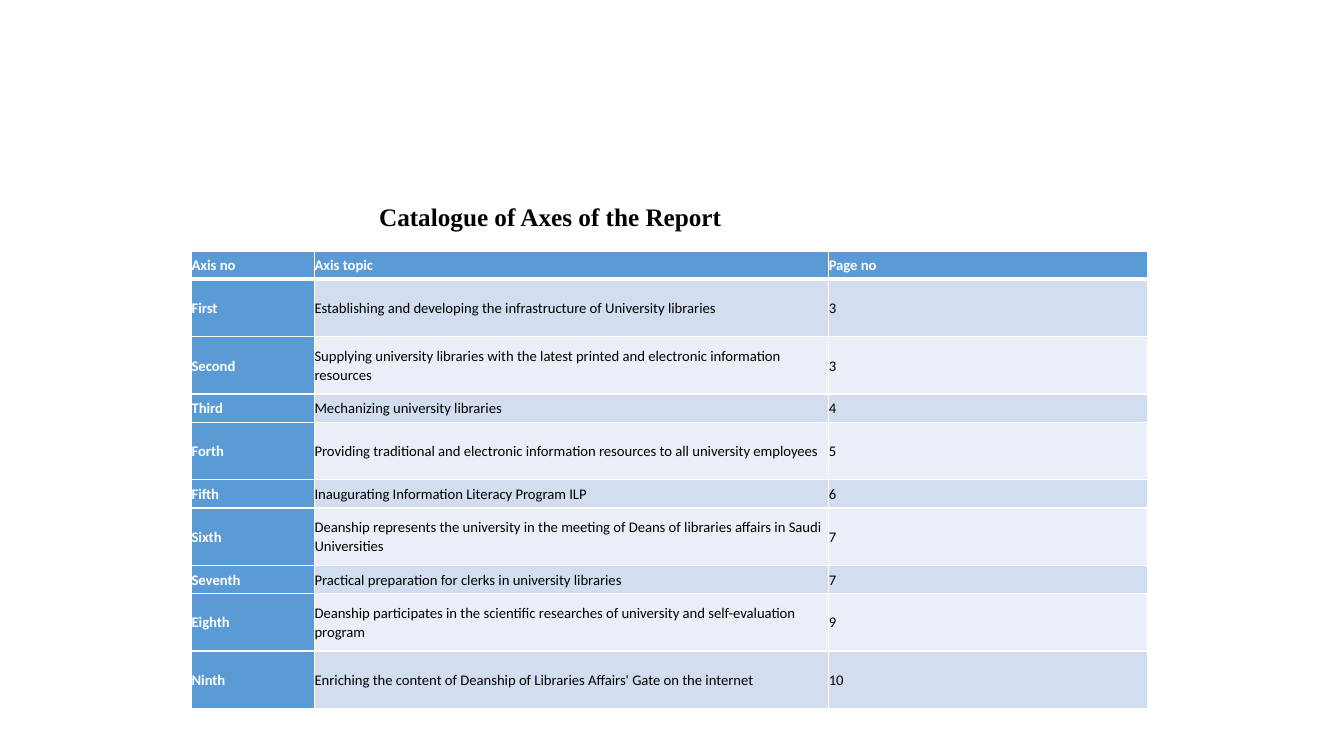
"""Build the slide that lists the axes of the report and their pages."""
from lxml import etree
from pptx import Presentation
from pptx.dml.color import RGBColor
from pptx.enum.text import MSO_ANCHOR, MSO_AUTO_SIZE, PP_ALIGN
from pptx.oxml.ns import qn
from pptx.util import Inches, Pt

MIDDLE, TOP = MSO_ANCHOR.MIDDLE, MSO_ANCHOR.TOP
LEFT = PP_ALIGN.LEFT
GROW = MSO_AUTO_SIZE.SHAPE_TO_FIT_TEXT
WHITE = RGBColor(0xFF, 0xFF, 0xFF)
BLACK = RGBColor(0x00, 0x00, 0x00)
BLUE = RGBColor(0x5B, 0x9B, 0xD5)
BANDS = [RGBColor(0xEA, 0xEF, 0xF7), RGBColor(0xD2, 0xDE, 0xEF)]

LOW, HIGH = 0.28, 0.57
WIDTHS = [1.22, 5.1, 3.16]
ROWS = [
    (LOW, "Axis no", "Axis topic", "Page no"),
    (HIGH, "First", "Establishing and developing the infrastructure of University libraries", "3"),
    (HIGH, "Second", "Supplying university libraries with the latest printed and electronic information resources", "3"),
    (LOW, "Third", "Mechanizing university libraries", "4"),
    (HIGH, "Forth", "Providing traditional and electronic information resources to all university employees", "5"),
    (LOW, "Fifth", "Inaugurating Information Literacy Program ILP", "6"),
    (HIGH, "Sixth", "Deanship represents the university in the meeting of Deans of libraries affairs in Saudi Universities", "7"),
    (LOW, "Seventh", "Practical preparation for clerks in university libraries", "7"),
    (HIGH, "Eighth", "Deanship participates in the scientific researches of university and self-evaluation program", "9"),
    (HIGH, "Ninth", "Enriching the content of Deanship of Libraries Affairs' Gate on the internet", "10"),
]


def style_text(frame, font, size, color, bold):
    para = frame.paragraphs[0]
    para.alignment = LEFT
    para.line_spacing = 1.07
    para.space_before = Pt(0)
    para.space_after = Pt(8)
    face = para.runs[0].font
    face.name = font
    face.size = Pt(size)
    face.bold = bold
    face.color.rgb = color


def add_border(cell, side, width):
    line = etree.SubElement(cell._tc.get_or_add_tcPr(), qn("a:ln" + side), w=str(Pt(width)))
    fill = etree.SubElement(line, qn("a:solidFill"))
    etree.SubElement(fill, qn("a:srgbClr"), val=str(WHITE))


prs = Presentation()
prs.slide_width = Inches(13.33)
prs.slide_height = Inches(7.5)
slide = prs.slides.add_slide(prs.slide_layouts[5])

title = slide.shapes.title
title.left, title.top = Inches(3.66), Inches(1.93)
title.width, title.height = Inches(3.63), Inches(0.43)
frame = title.text_frame
frame.text = "Catalogue of Axes of the Report"
frame.word_wrap = False
frame.auto_size = GROW
frame.vertical_anchor = TOP
style_text(frame, "Times New Roman", 18, BLACK, True)

height = sum(row[0] for row in ROWS)
table = slide.shapes.add_table(
    len(ROWS), len(WIDTHS), Inches(1.9), Inches(2.49), Inches(sum(WIDTHS)), Inches(height)
).table
table.first_col = True
for col, width in enumerate(WIDTHS):
    table.columns[col].width = Inches(width)

for row, (tall, *texts) in enumerate(ROWS):
    table.rows[row].height = Inches(tall)
    for col, text in enumerate(texts):
        cell = table.cell(row, col)
        head = row == 0 or col == 0
        cell.text = text
        cell.vertical_anchor = MIDDLE
        cell.margin_left = cell.margin_right = cell.margin_top = cell.margin_bottom = 0
        style_text(cell.text_frame, "Calibri", 10.5, WHITE if head else BLACK, head)
        for side in "LRTB":
            thick = (row, side) in [(0, "B"), (1, "T")]
            add_border(cell, side, 3 if thick else 1)
        cell.fill.solid()
        cell.fill.fore_color.rgb = BLUE if head else BANDS[row % 2]

prs.save("out.pptx")
